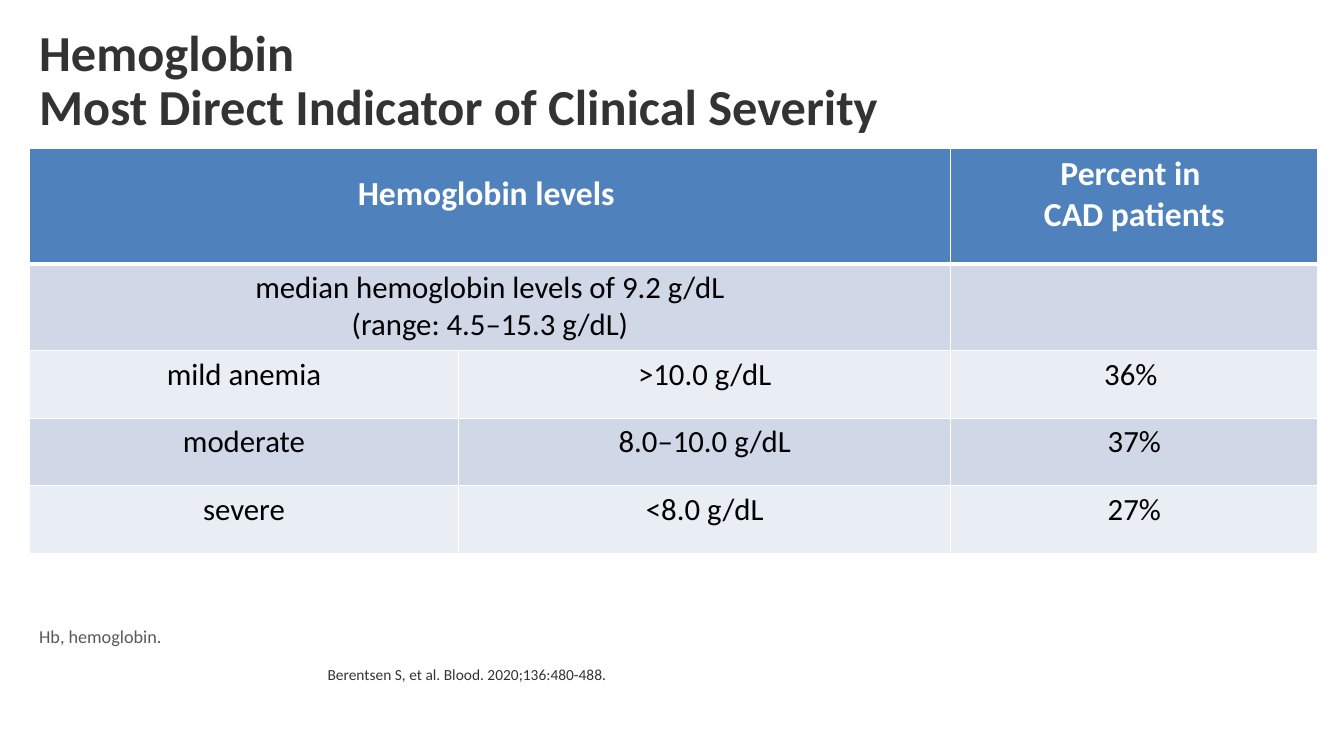
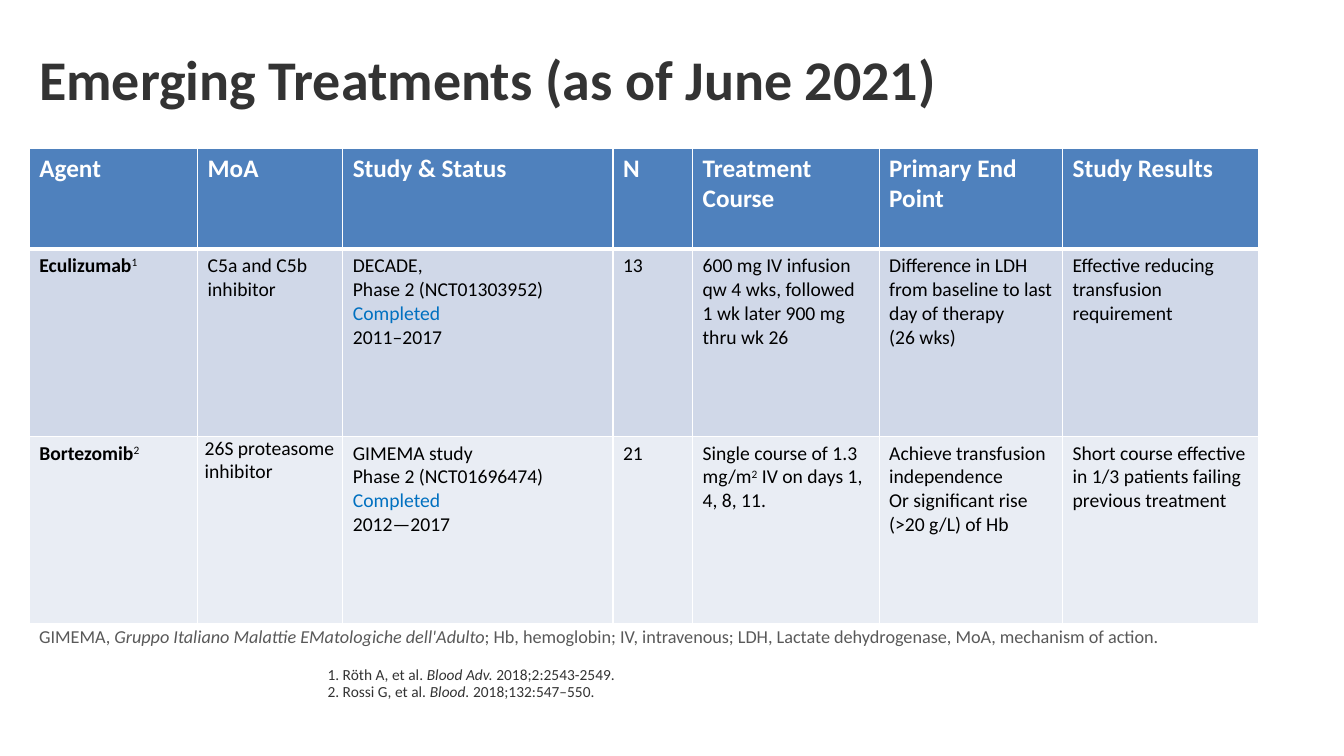
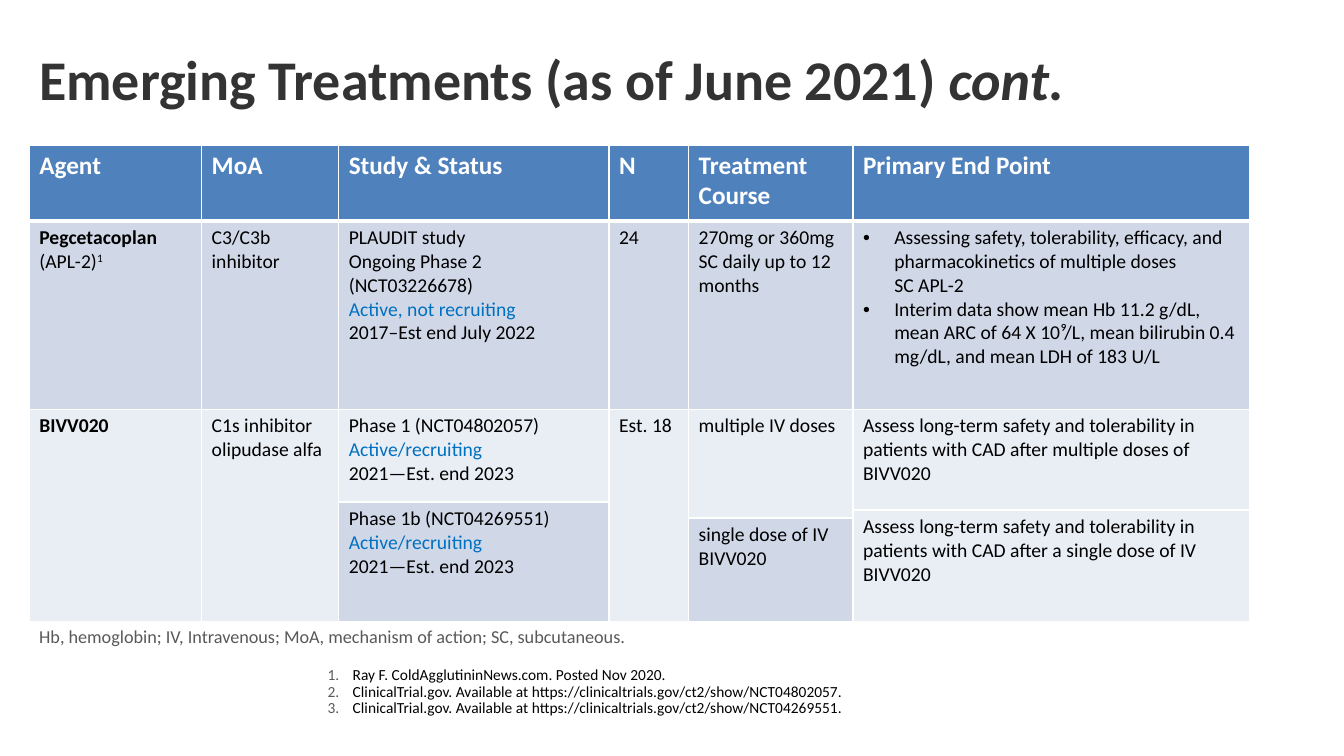
from lxml import etree
from pptx import Presentation
from pptx.dml.color import RGBColor
from pptx.enum.text import MSO_ANCHOR as Anchor, PP_ALIGN as Align
from pptx.oxml.ns import qn
from pptx.util import Inches, Pt

COLORS = {
    "title": "333333", "caption": "595959", "black": "000000", "white": "FFFFFF",
    "status": "0070C0", "header": "4F81BD", "band": "D0D8E8", "light": "E9EDF4",
}
FONT = "Calibri"
LEFT, WIDTH = 0.29, 12.78
TITLE_BOX = (LEFT, 0.19, WIDTH, 1.25)
CAPTION_BOX = (LEFT, 6.18, WIDTH, 0.3)
REFERENCE_BOX = (3.15, 6.57, 10.18, 0.8)


def rgb(name):
    return RGBColor.from_string(COLORS[name])


def bold(text):
    return text, "bold"


def italic(text):
    return text, "italic"


def raised(text):
    return text, "raised"


def status(text):
    return text, "status"


def add_bullet(para, kind, indent, color=None):
    """Give the paragraph a hanging dot or an automatic number."""
    props = para._p.get_or_add_pPr()
    props.set("marL", str(Inches(indent)))
    props.set("indent", str(-Inches(indent)))
    if color:
        holder = etree.SubElement(props, qn("a:buClr"))
        etree.SubElement(holder, qn("a:srgbClr")).set("val", COLORS[color])
    if kind == "number":
        etree.SubElement(props, qn("a:buAutoNum")).set("type", "arabicPeriod")
    else:
        etree.SubElement(props, qn("a:buFont")).set("typeface", "Arial")
        etree.SubElement(props, qn("a:buChar")).set("char", "•")


def add_span(para, text, style=None):
    """Add one run per line; a vertical tab in the text is a line break."""
    for index, line in enumerate(text.split("\v")):
        if index:
            para.add_line_break()
        span = para.add_run()
        span.text = line
        if style == "bold":
            span.font.bold = True
        elif style == "italic":
            span.font.italic = True
        elif style == "status":
            span.font.color.rgb = rgb("status")
        elif style == "raised":
            span._r.get_or_add_rPr().set("baseline", "30000")


def write(frame, paragraphs, size, color, strong=False, align=Align.LEFT,
          spacing=None, bullet=None):
    """Fill a frame; a paragraph is a string, a styled span or a list of these."""
    if isinstance(paragraphs, str):
        paragraphs = [paragraphs]
    for index, spans in enumerate(paragraphs):
        para = frame.paragraphs[0] if index == 0 else frame.add_paragraph()
        if bullet:
            add_bullet(para, *bullet)
        para.alignment = align
        if spacing:
            para.line_spacing = spacing
        font = para.font
        font.name, font.size, font.bold = FONT, Pt(size), strong
        font.color.rgb = rgb(color)
        for span in spans if isinstance(spans, list) else [spans]:
            add_span(para, *([span] if isinstance(span, str) else span))


def add_text(page, place, paragraphs, size, color, anchor=Anchor.TOP, **options):
    frame = page.shapes.add_textbox(*map(Inches, place)).text_frame
    frame.word_wrap = True
    frame.vertical_anchor = anchor
    write(frame, paragraphs, size, color, spacing=0.9, **options)


def add_page(deck, title, caption, references, title_size=40,
             reference_color="title", bullet=None):
    page = deck.slides.add_slide(deck.slide_layouts[6])
    add_text(page, TITLE_BOX, title, title_size, "title", Anchor.MIDDLE, strong=True)
    add_text(page, REFERENCE_BOX, references, 11, reference_color, bullet=bullet)
    add_text(page, CAPTION_BOX, caption, 13, "caption")
    return page


def set_borders(cell, row):
    """White rules, with a thick one below the header row."""
    props = cell._tc.get_or_add_tcPr()
    widths = {"L": 1, "R": 1, "T": 3 if row == 1 else 1, "B": 3 if row == 0 else 1}
    for side, width in widths.items():
        line = etree.SubElement(props, qn(f"a:ln{side}"), w=str(Pt(width)))
        fill = etree.SubElement(line, qn("a:solidFill"))
        etree.SubElement(fill, qn("a:srgbClr")).set("val", COLORS["white"])


def add_grid(page, top, columns, heights, rows, header_size, body_size,
             merges=(), align=Align.LEFT):
    """Draw a banded table; None marks a cell left empty or merged away."""
    grid = page.shapes.add_table(
        len(heights), len(columns), Inches(LEFT), Inches(top),
        Inches(sum(columns)), Inches(sum(heights))).table
    for column, width in zip(grid.columns, columns):
        column.width = Inches(width)
    for line, height in zip(grid.rows, heights):
        line.height = Inches(height)
    for first_row, first_column, last_row, last_column in merges:
        grid.cell(first_row, first_column).merge(grid.cell(last_row, last_column))
    for row, texts in enumerate(rows):
        header = row == 0
        for column, text in enumerate(texts):
            cell = grid.cell(row, column)
            set_borders(cell, row)
            cell.fill.solid()
            cell.fill.fore_color.rgb = rgb(
                "header" if header else "band" if row % 2 else "light")
            if text:
                write(cell.text_frame, text, header_size if header else body_size,
                      "white" if header else "black", strong=header, align=align)
    return grid


def hemoglobin_page(deck):
    page = add_page(
        deck, "Hemoglobin\vMost Direct Indicator of Clinical Severity",
        "Hb, hemoglobin.", "Berentsen S, et al. Blood. 2020;136:480-488.", title_size=36)
    grid = add_grid(
        page, 1.47, [4.26, 4.88, 3.64], [1.15, 0.86, 0.67, 0.67, 0.67],
        [["Hemoglobin levels ", None, "Percent in \vCAD patients"],
         [["median hemoglobin levels of 9.2 g/dL", "(range: 4.5–15.3 g/dL)"], None, None],
         ["mild anemia", ">10.0 g/dL", "36% "],
         ["moderate", "8.0–10.0 g/dL", "37%"],
         ["severe", "<8.0 g/dL", "27%"]],
        24, 22, merges=[(0, 0, 0, 1), (1, 0, 1, 1)], align=Align.CENTER)
    grid.cell(0, 0).text_frame.paragraphs[0].line_spacing = 1.5


def treatments_page(deck):
    page = add_page(
        deck, "Emerging Treatments (as of June 2021)",
        [["GIMEMA, ", italic("Gruppo Italiano Malattie EMatologiche dell'Adulto"),
          "; Hb, hemoglobin; IV, intravenous; LDH, Lactate dehydrogenase, "
          "MoA, mechanism of action."]],
        [["1. Röth A, et al. ", italic("Blood Adv. "), "2018;2:2543-2549."],
         ["2. Rossi G, et al. ", italic("Blood. "), "2018;132:547–550."]])
    grid = add_grid(
        page, 1.47, [1.67, 1.44, 2.68, 0.79, 1.85, 1.82, 1.94], [1, 1.86, 1.86],
        [["Agent", "MoA", "Study & Status", "N", "Treatment Course",
          "Primary End Point", "Study Results"],
         [[[bold("Eculizumab"), raised("1")]],
          "C5a and C5b inhibitor",
          ["DECADE,", "Phase 2 (NCT01303952)", status("Completed"), "2011–2017"],
          "13",
          "600 mg IV infusion qw 4 wks, followed 1 wk later 900 mg thru wk 26",
          "Difference in LDH from baseline to last day of therapy \v(26 wks)",
          "Effective reducing transfusion requirement"],
         [[[bold("Bortezomib"), raised("2")]],
          "26S proteasome inhibitor",
          ["GIMEMA study", "Phase 2 (NCT01696474)", status("Completed"), "2012—2017"],
          "21",
          [["Single course of 1.3 mg/m", raised("2"), " IV on days 1, 4, 8, 11."]],
          ["Achieve transfusion independence", "Or significant rise (>20 g/L) of Hb"],
          "Short course effective in 1/3 patients failing previous treatment"]],
        18, 14)
    proteasome = grid.cell(2, 1)
    proteasome.margin_left = proteasome.margin_right = Inches(0.07)
    proteasome.margin_top = proteasome.margin_bottom = 0


def continued_page(deck):
    page = add_page(
        deck, [["Emerging Treatments (as of June 2021) ", italic("cont.")]],
        "Hb, hemoglobin; IV, Intravenous; MoA, mechanism of action; SC, subcutaneous.",
        ["Ray F. ColdAgglutininNews.com. Posted Nov 2020.",
         "ClinicalTrial.gov. Available at https://clinicaltrials.gov/ct2/show/NCT04802057.",
         "ClinicalTrial.gov. Available at https://clinicaltrials.gov/ct2/show/NCT04269551."],
        reference_color="black", bullet=("number", 0.25, "caption"))
    recruiting = [status("Active/recruiting"), "2021—Est. end 2023"]
    grid = add_grid(
        page, 1.44, [1.71, 1.36, 2.68, 0.79, 1.63, 3.93],
        [0.75, 1.87, 0.92, 0.08, 0.08, 1.03],
        [["Agent", "MoA", "Study & Status", "N", "Treatment Course", "Primary End Point"],
         [[[bold("Pegcetacoplan"), " (APL-2)", raised("1")]],
          "C3/C3b inhibitor",
          ["PLAUDIT study", "Ongoing Phase 2 (NCT03226678)",
           status("Active, not recruiting"), "2017–Est end July 2022"],
          "24",
          "270mg or 360mg SC daily up to 12 months",
          None],
         [[bold("BIVV020")],
          "C1s inhibitor olipudase alfa",
          ["Phase 1 (NCT04802057)", *recruiting],
          "Est. 18",
          "multiple IV doses",
          "Assess long-term safety and tolerability in patients with CAD "
          "after multiple doses of BIVV020"],
         [None, None, ["Phase 1b (NCT04269551)", *recruiting], None, None, None],
         [None, None, None, None, None,
          "Assess long-term safety and tolerability in patients with CAD "
          "after a single dose of IV BIVV020"],
         [None, None, None, None, "single dose of IV BIVV020", None]],
        18, 14,
        merges=[(2, 0, 5, 0), (2, 1, 5, 1), (3, 2, 5, 2), (2, 3, 5, 3),
                (2, 4, 4, 4), (2, 5, 3, 5), (4, 5, 5, 5)])
    write(grid.cell(1, 5).text_frame,
          ["Assessing safety, tolerability, efficacy, and pharmacokinetics "
           "of multiple doses \vSC APL-2",
           "Interim data show mean Hb 11.2 g/dL, mean ARC of 64 X 10⁹/L, "
           "mean bilirubin 0.4 mg/dL, and mean LDH of 183 U/L"],
          14, "black", bullet=("dot", 0.31))


def main():
    deck = Presentation()
    deck.slide_width, deck.slide_height = Inches(13.33), Inches(7.5)
    for build in (hemoglobin_page, treatments_page, continued_page):
        build(deck)
    deck.save("out.pptx")


if __name__ == "__main__":
    main()
